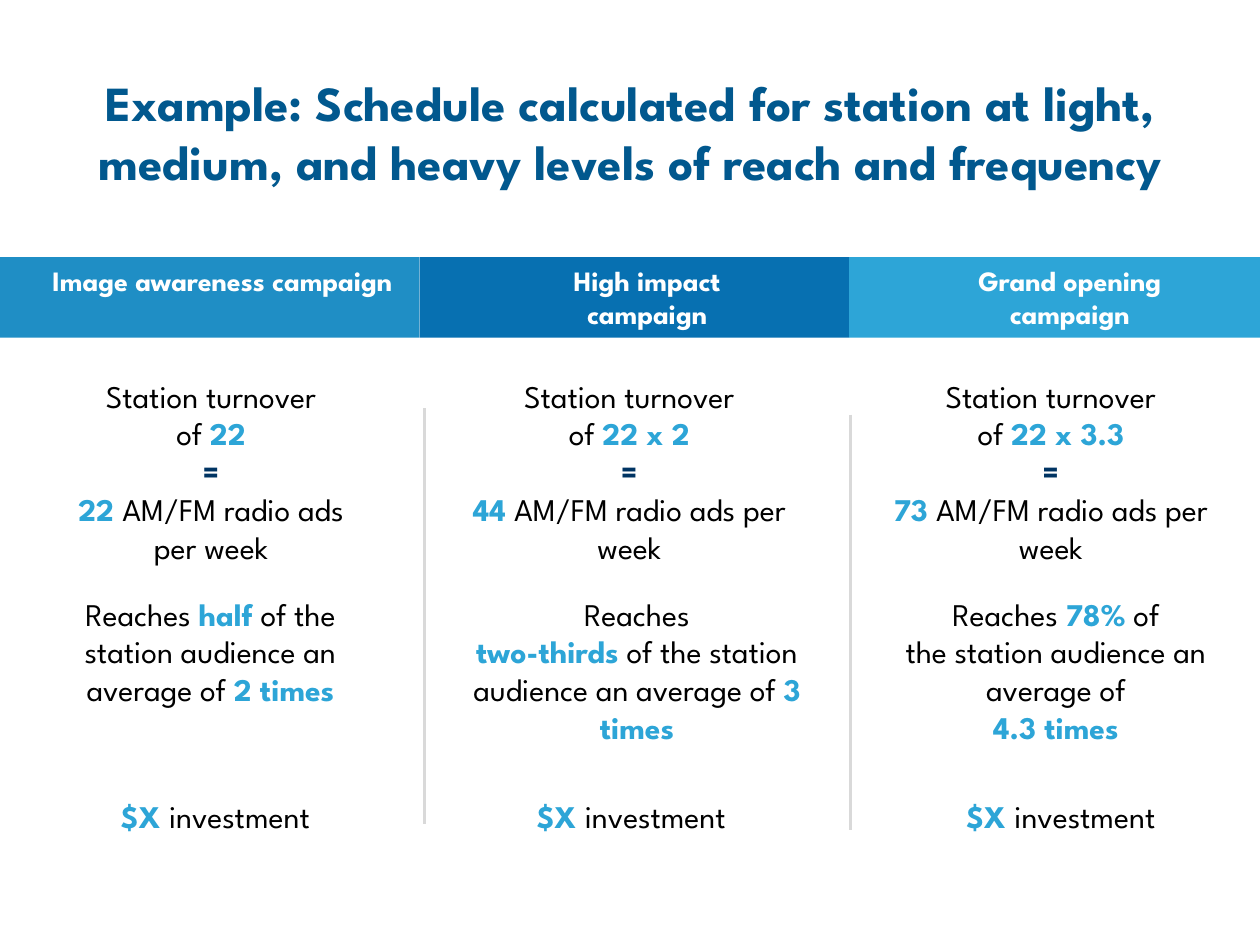
import pptx
import pptx.util
import pptx.dml.color
import pptx.enum.shapes
import pptx.enum.text
import pptx.oxml.ns
import lxml.etree

PX = 9144
COLORS = {
    "title": "01588E", "text": "000000", "accent": "2DA5D7", "equals": "003463",
    "white": "FFFFFF", "image": "1F8EC5", "impact": "0770B1", "opening": "2DA5D7",
    "divider": "D9D9D9",
}


def color(name):
    return pptx.dml.color.RGBColor.from_string(COLORS[name])


def write(shape, paragraphs, size):
    frame = shape.text_frame
    frame.word_wrap = True
    frame.vertical_anchor = pptx.enum.text.MSO_ANCHOR.TOP
    for index, runs in enumerate(paragraphs):
        paragraph = frame.add_paragraph() if index else frame.paragraphs[0]
        paragraph.alignment = pptx.enum.text.PP_ALIGN.CENTER
        paragraph.font.name = "League Spartan"
        paragraph.font.size = pptx.util.Pt(size)
        for text, name in runs:
            for number, line in enumerate(text.split("\n")):
                if number:
                    paragraph.add_line_break()
                if line:
                    run = paragraph.add_run()
                    run.text = line
                    run.font.bold = name != "text"
                    run.font.color.rgb = color(name)


presentation = pptx.Presentation()
presentation.slide_width = 1000 * PX
presentation.slide_height = 750 * PX
slide = presentation.slides.add_slide(presentation.slide_layouts[6])

title = "Example: Schedule calculated for station at light, medium, and heavy levels of reach and frequency"
text_boxes = [((0, 53, 1000, 104), [[(title, "title")]], 28)]

schedules = [
    ((35, 265), "22", "22"),
    ((358, 283), "22 x 2", "44"),
    ((693, 282), "22 x 3.3", "73"),
]
for (left, width), turnover, ads in schedules:
    text_boxes.append(((left, 294, width, 162), [
        [("Station turnover\nof ", "text"), (turnover, "accent")],
        [("=", "equals")],
        [(ads + " ", "accent"), ("AM/FM radio ads per week", "text")],
    ], 18))

reaches = [
    ((41, 252), [[("Reaches ", "text"), ("half", "accent"),
                  (" of the station audience an average of ", "text"), ("2 times", "accent")]]),
    ((363, 285), [[("Reaches\n", "text"), ("two-thirds", "accent"),
                   (" of the station audience an average of ", "text"), ("3 times", "accent")]]),
    ((701, 274), [[("Reaches ", "text"), ("78%", "accent"),
                   (" of\nthe station audience an average of", "text")],
                  [("4.3 times", "accent")]]),
]
for (left, width), paragraphs in reaches:
    text_boxes.append(((left, 467, width, 131), paragraphs, 18))

for left in (45, 375, 716):
    text_boxes.append(((left, 628, 252, 40), [[("$X ", "accent"), ("investment", "text")]], 18))

for box, paragraphs, size in text_boxes:
    shape = slide.shapes.add_textbox(*[value * PX for value in box])
    write(shape, paragraphs, size)

headers = [
    (0, 333, "image", "Image awareness campaign"),
    (333, 341, "impact", "High impact\ncampaign"),
    (674, 330, "opening", "Grand opening\ncampaign"),
]
for left, width, fill, text in headers:
    shape = slide.shapes.add_shape(
        pptx.enum.shapes.MSO_SHAPE.RECTANGLE, left * PX, 204 * PX, width * PX, 64 * PX)
    shape.shadow.inherit = False
    shape.fill.solid()
    shape.fill.fore_color.rgb = color(fill)
    shape.line.fill.background()
    shape.text_frame.margin_left = 30 * PX
    write(shape, [[(text, "white")]], 16)

for x, top in ((337, 324), (675, 329)):
    divider = slide.shapes.add_connector(
        pptx.enum.shapes.MSO_CONNECTOR.STRAIGHT, x * PX, top * PX, x * PX, (top + 330) * PX)
    divider.line.color.rgb = color("divider")
    divider.line.width = pptx.util.Pt(2)
    lxml.etree.SubElement(divider._element.spPr, pptx.oxml.ns.qn("a:effectLst"))

presentation.save("out.pptx")
